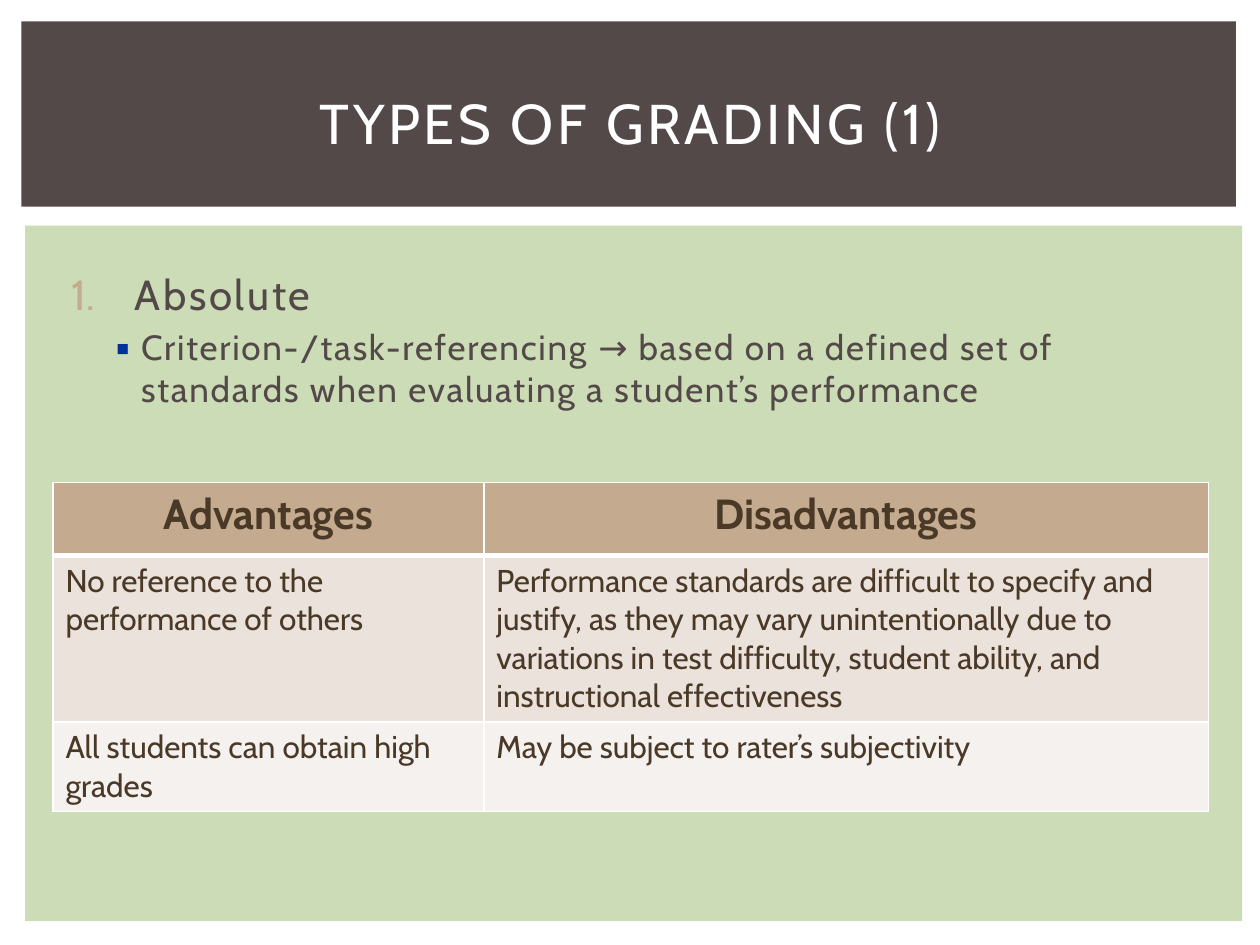
from dataclasses import dataclass

from lxml import etree
from pptx import Presentation
from pptx import util as u
from pptx.dml import color
from pptx.enum import shapes, text
from pptx.oxml import ns


@dataclass(frozen=True)
class Theme:
    """Hold the colours, font and type sizes of the deck."""
    font: str = "Cabin"
    dark: str = "534949"
    green: str = "CBDCB6"
    tan: str = "C4AB8F"
    blue: str = "003399"
    white: str = "FFFFFF"
    brown: str = "4A3927"
    bands: tuple = ("EAE2DB", "F5F1EE")
    title_size: int = 32
    head_size: int = 24
    point_size: int = 20
    cell_size: int = 18


THEME = Theme()
COLUMNS = (3.42, 5.75)
ROWS = (0.58, 1.32, 0.68)
GRADING = (
    ("Advantages", "Disadvantages"),
    ("No reference to the performance of others",
     "Performance standards are difficult to specify and justify, as they may vary "
     "unintentionally due to variations in test difficulty, student ability, and "
     "instructional effectiveness"),
    ("All students can obtain high grades", "May be subject to rater’s subjectivity"),
)


def rgb(value):
    """Turn a hex string into a colour."""
    return color.RGBColor.from_string(value)


def inches(*lengths):
    """Turn numbers into a list of lengths."""
    return [u.Inches(length) for length in lengths]


def add_element(parent, tag, **attributes):
    """Append a DrawingML element to its parent."""
    return etree.SubElement(parent, ns.qn(f"a:{tag}"), attributes)


def write(para, words, size, ink, bold=False, align=text.PP_ALIGN.LEFT, tracking=0, before=0):
    """Write one formatted run into a paragraph."""
    para.alignment = align
    para.space_before = u.Pt(before)
    span = para.add_run()
    span.text = words
    span.font.name = THEME.font
    span.font.size = u.Pt(size)
    span.font.bold = bold
    span.font.color.rgb = rgb(ink)
    if tracking:
        span._r.get_or_add_rPr().set("spc", str(round(tracking * 100)))


def set_bullet(para, ink, indent, hanging, tag, **attributes):
    """Give a paragraph its indent and a coloured bullet."""
    properties = para._p.get_or_add_pPr()
    properties.set("marL", str(u.Inches(indent)))
    properties.set("indent", str(-u.Inches(hanging)))
    add_element(add_element(properties, "buClr"), "srgbClr", val=ink)
    add_element(properties, "buFont", typeface=THEME.font)
    add_element(properties, tag, **attributes)


def add_panel(page, bounds, fill):
    """Draw a plain coloured rectangle."""
    box = page.shapes.add_shape(shapes.MSO_SHAPE.RECTANGLE, *inches(*bounds))
    box.shadow.inherit = False
    box.fill.solid()
    box.fill.fore_color.rgb = rgb(fill)
    box.line.fill.background()


def place(page, box, bounds, anchor):
    """Move a placeholder to its bounds, in front of the panels."""
    page.shapes.element.append(box.element)
    box.left, box.top, box.width, box.height = inches(*bounds)
    frame = box.text_frame
    frame.word_wrap = True
    frame.auto_size = text.MSO_AUTO_SIZE.NONE
    frame.vertical_anchor = anchor
    return frame


def add_title(page, bounds):
    """Fill the title placeholder."""
    frame = place(page, page.shapes.title, bounds, text.MSO_ANCHOR.MIDDLE)
    write(frame.paragraphs[0], "TYPES OF GRADING (1)", THEME.title_size, THEME.white,
          align=text.PP_ALIGN.CENTER, tracking=2)


def add_points(page, bounds):
    """Fill the body placeholder with the numbered type and its description."""
    frame = place(page, page.placeholders[1], bounds, text.MSO_ANCHOR.TOP)
    para = frame.paragraphs[0]
    set_bullet(para, THEME.tan, 0.55, 0.5, "buAutoNum", type="arabicPeriod")
    write(para, "Absolute", THEME.head_size, THEME.dark, tracking=1.5)
    para = frame.add_paragraph()
    para.level = 1
    set_bullet(para, THEME.blue, 0.6, 0.2, "buChar", char="▪")
    write(para, "Criterion-/task-referencing → based on a defined set of standards "
          "when evaluating a student’s performance", THEME.point_size, THEME.dark,
          tracking=1, before=4)


def set_borders(cell, **widths):
    """Draw white borders on the sides of a cell."""
    properties = cell._tc.get_or_add_tcPr()
    for side, width in widths.items():
        line = add_element(properties, f"ln{side}", w=str(u.Pt(width)))
        add_element(add_element(line, "solidFill"), "srgbClr", val=THEME.white)


def add_grading_table(page, bounds):
    """Add the table of advantages and disadvantages."""
    table = page.shapes.add_table(len(ROWS), len(COLUMNS), *inches(*bounds)).table
    for column, width in zip(table.columns, COLUMNS):
        column.width = u.Inches(width)
    for index, (row, height, entries) in enumerate(zip(table.rows, ROWS, GRADING)):
        row.height = u.Inches(height)
        header = index == 0
        fill = THEME.tan if header else THEME.bands[index - 1]
        for cell, words in zip(row.cells, entries):
            set_borders(cell, L=1, R=1, T=3 if index == 1 else 1, B=3 if header else 1)
            cell.fill.solid()
            cell.fill.fore_color.rgb = rgb(fill)
            write(cell.text_frame.paragraphs[0], words,
                  THEME.head_size if header else THEME.cell_size, THEME.brown, bold=header,
                  align=text.PP_ALIGN.CENTER if header else text.PP_ALIGN.LEFT)


def main():
    """Build and save the deck."""
    deck = Presentation()
    deck.slide_width, deck.slide_height = inches(10, 7.5)
    page = deck.slides.add_slide(deck.slide_layouts[1])
    add_panel(page, (0.2, 1.79, 9.66, 5.52), THEME.green)
    add_panel(page, (0.17, 0.17, 9.64, 1.47), THEME.dark)
    add_points(page, (0.42, 2.08, 9.19, 4.82))
    add_title(page, (0.42, 0.39, 9.17, 1.15))
    add_grading_table(page, (0.42, 3.83, sum(COLUMNS), sum(ROWS)))
    deck.save("out.pptx")


if __name__ == "__main__":
    main()
